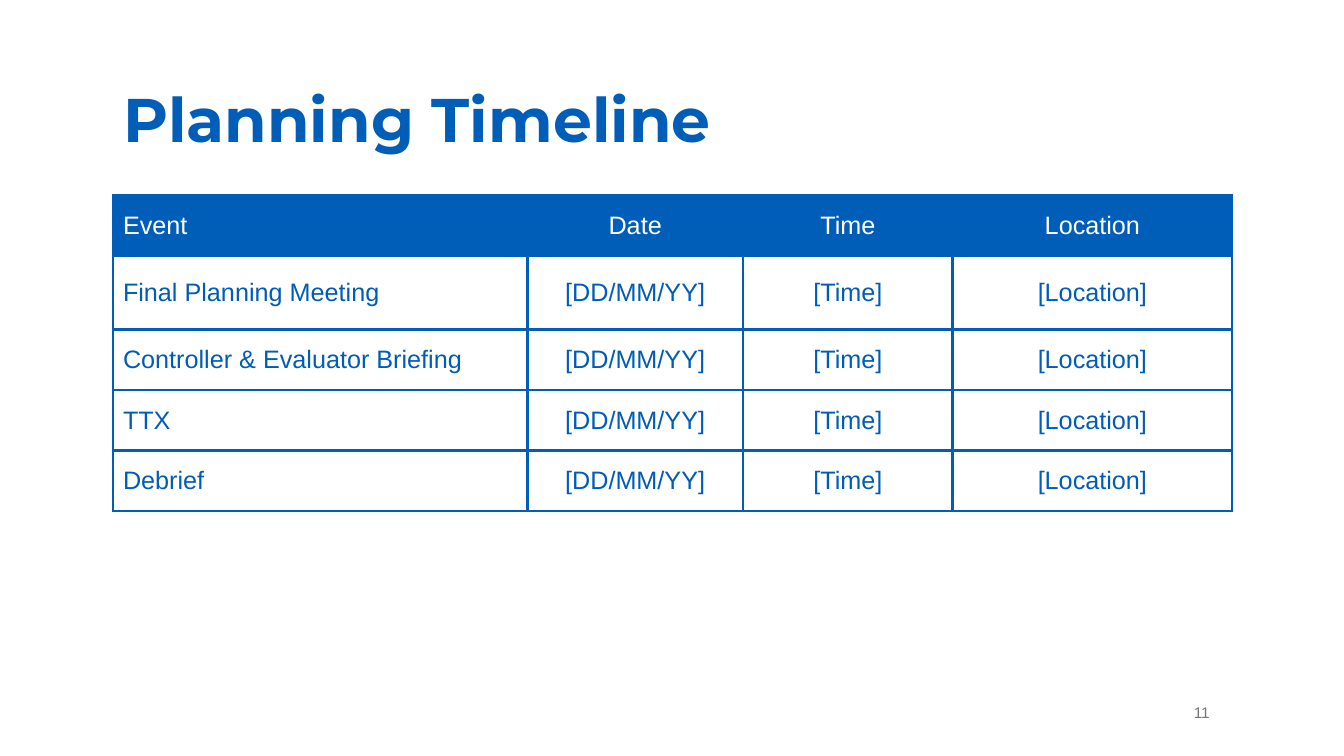
import pptx
import pptx.dml.color
import pptx.enum.text
import pptx.oxml
import pptx.oxml.ns
import pptx.util

PX = 9144  # EMU per px, at 100 px to the inch
COLOURS = {"blue": "005EB8", "cell text": "005CB9", "white": "FFFFFF", "grey": "77777A"}
COLUMN_WIDTHS = [411, 214, 208, 277]
ROW_HEIGHTS = [60, 73, 60, 60, 60]
HEADINGS = ["Event", "Date", "Time", "Location"]
EVENTS = ["Final Planning Meeting", "Controller & Evaluator Briefing", "TTX", "Debrief"]
DETAILS = ["[DD/MM/YY]", "[Time]", "[Location]"]
BORDER_WIDTH = pptx.util.Pt(2.25)
ALIGN = pptx.enum.text.PP_ALIGN
MIDDLE = pptx.enum.text.MSO_ANCHOR.MIDDLE


def scaled(box):
    return [length * PX for length in box]


def colour(name):
    return pptx.dml.color.RGBColor.from_string(COLOURS[name])


def format_paragraph(para, size, colour_name, align, font="Arial", bold=False):
    para.alignment = align
    para.font.name = font
    para.font.size = pptx.util.Pt(size)
    para.font.bold = bold
    para.font.color.rgb = colour(colour_name)


def add_borders(cell):
    properties = cell._tc.get_or_add_tcPr()
    for index, side in enumerate("LRTB"):
        properties.insert(index, pptx.oxml.parse_xml(
            f'<a:ln{side} {pptx.oxml.ns.nsdecls("a")} w="{BORDER_WIDTH}">'
            f'<a:solidFill><a:srgbClr val="{COLOURS["blue"]}"/></a:solidFill>'
            f'</a:ln{side}>'))


def place_title(page, box):
    title = page.shapes.title
    title.left, title.top, title.width, title.height = scaled(box)
    frame = title.text_frame
    frame.text = "Planning Timeline"
    frame.word_wrap = True
    frame.auto_size = pptx.enum.text.MSO_AUTO_SIZE.NONE
    frame.vertical_anchor = MIDDLE
    para = frame.paragraphs[0]
    para.line_spacing = 0.9
    format_paragraph(para, 44, "blue", ALIGN.LEFT, "Montserrat", True)


def place_timeline(page, box):
    rows = [HEADINGS] + [[event] + DETAILS for event in EVENTS]
    table = page.shapes.add_table(len(rows), len(HEADINGS), *scaled(box)).table
    table.horz_banding = False
    for column, width in zip(table.columns, COLUMN_WIDTHS):
        column.width = width * PX
    for row, height in zip(table.rows, ROW_HEIGHTS):
        row.height = height * PX
    for row_index, texts in enumerate(rows):
        fill, ink = ("white", "cell text") if row_index else ("blue", "white")
        for column_index, text in enumerate(texts):
            cell = table.cell(row_index, column_index)
            cell.text = text
            cell.vertical_anchor = MIDDLE
            cell.fill.solid()
            cell.fill.fore_color.rgb = colour(fill)
            add_borders(cell)
            align = ALIGN.CENTER if column_index else ALIGN.LEFT
            format_paragraph(cell.text_frame.paragraphs[0], 18, ink, align)


def place_page_number(page, box):
    frame = page.shapes.add_textbox(*scaled(box)).text_frame
    frame.word_wrap = True
    frame.vertical_anchor = MIDDLE
    frame.text = "11"
    format_paragraph(frame.paragraphs[0], 11, "grey", ALIGN.CENTER)


def main():
    deck = pptx.Presentation()
    deck.slide_width, deck.slide_height = scaled((1333, 750))
    page = deck.slides.add_slide(deck.slide_layouts.get_by_name("Title Only"))
    place_page_number(page, (1165, 686, 54, 41))
    place_timeline(page, (112, 194, sum(COLUMN_WIDTHS), sum(ROW_HEIGHTS)))
    place_title(page, (112, 49, 1150, 145))
    deck.save("out.pptx")


if __name__ == "__main__":
    main()
